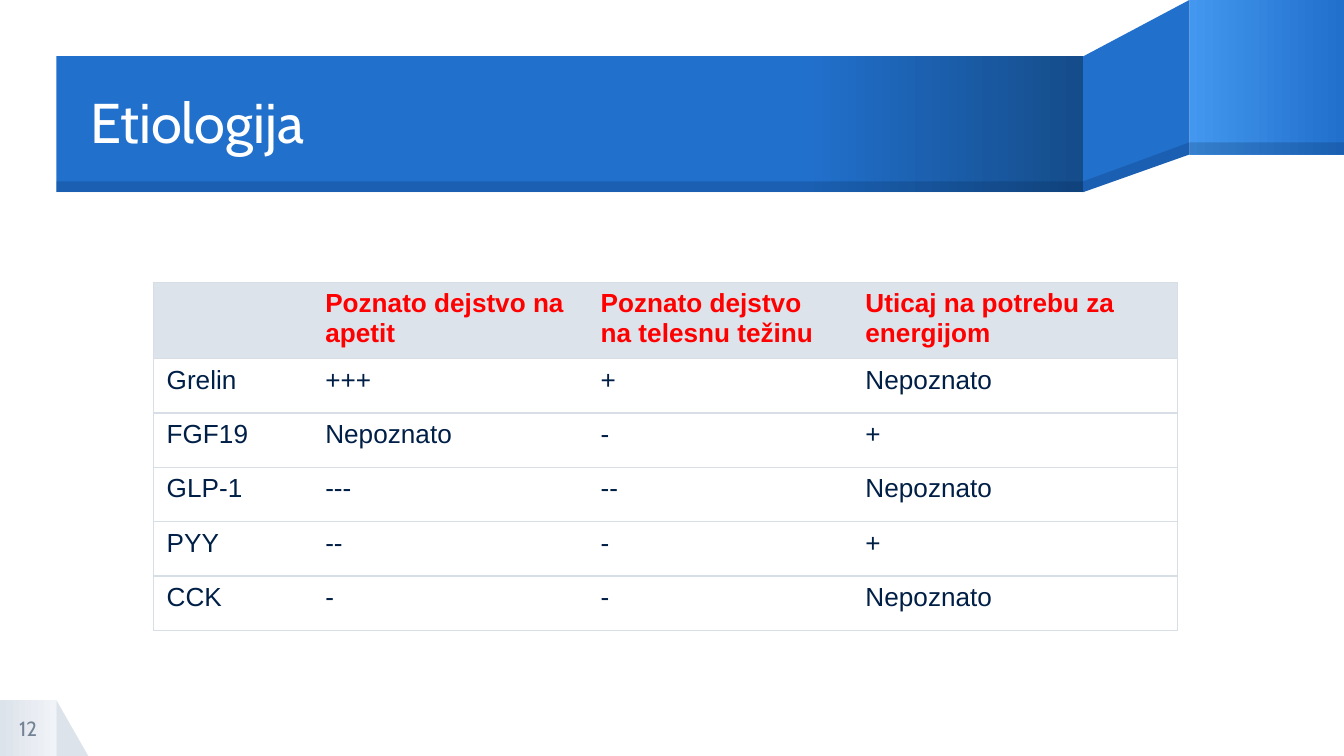
from lxml import etree
from pptx import Presentation
from pptx.dml.color import RGBColor
from pptx.enum.shapes import MSO_SHAPE
from pptx.enum.text import MSO_ANCHOR, PP_ALIGN
from pptx.oxml.ns import qn
from pptx.util import Inches, Pt

RECT = MSO_SHAPE.RECTANGLE
TRIANGLE = MSO_SHAPE.RIGHT_TRIANGLE
MIDDLE = MSO_ANCHOR.MIDDLE
LEFT, CENTER = PP_ALIGN.LEFT, PP_ALIGN.CENTER

WHITE = RGBColor(0xFF, 0xFF, 0xFF)
BLUE = RGBColor(0x21, 0x70, 0xCC)
LIGHT_BLUE = RGBColor(0x43, 0x97, 0xEE)
DARK_BLUE = RGBColor(0x15, 0x4C, 0x8A)
NAVY = RGBColor(0x00, 0x1F, 0x46)
GRAY = RGBColor(0xDD, 0xE3, 0xEB)
PALE_GRAY = RGBColor(0xF0, 0xF3, 0xF7)
NUMBER_GRAY = RGBColor(0x74, 0x83, 0x94)
BORDER = RGBColor(0xD8, 0xDE, 0xE6)
RED = RGBColor(0xFF, 0x00, 0x00)


def paint(sp, color, end=None, start=0, alpha=None):
    sp.shadow.inherit = False
    sp.line.fill.background()
    if end is not None:
        sp.fill.gradient()
        sp.fill.gradient_angle = 0
        first, last = sp.fill.gradient_stops
        first.color.rgb, first.position = color, start
        last.color.rgb, last.position = end, 1
        return
    sp.fill.solid()
    sp.fill.fore_color.rgb = color
    if alpha is not None:
        clr = sp._element.spPr.find(qn("a:solidFill")).find(qn("a:srgbClr"))
        etree.SubElement(clr, qn("a:alpha")).set("val", str(alpha * 1000))


def set_border(cell, side, color):
    ln = etree.SubElement(cell._tc.get_or_add_tcPr(), qn(f"a:ln{side}"), w=str(Pt(0.75)))
    if color is None:
        etree.SubElement(ln, qn("a:noFill"))
    else:
        fill = etree.SubElement(ln, qn("a:solidFill"))
        etree.SubElement(fill, qn("a:srgbClr"), val=str(color))


prs = Presentation()
prs.slide_width, prs.slide_height = Inches(10), Inches(10 * 9 / 16)
s = prs.slides.add_slide(prs.slide_layouts[6])

rects = [
    (TRIANGLE, (0.42, 5.21, 0.24, 0.42), {"color": GRAY}),
    (RECT, (0, 5.21, 0.42, 0.42), {"color": GRAY, "end": PALE_GRAY}),
    (RECT, (8.85, 0, 1.15, 1.15), {"color": LIGHT_BLUE, "end": BLUE}),
    (RECT, (0.42, 0.42, 7.64, 1.01), {"color": BLUE, "end": DARK_BLUE, "start": 0.73}),
    (RECT, (8.85, 1.06, 1.15, 0.09), {"color": NAVY, "alpha": 20}),
    (RECT, (0.42, 1.35, 7.64, 0.08), {"color": NAVY, "alpha": 20}),
]
for kind, box, look in rects:
    sp = s.shapes.add_shape(kind, *[Inches(v) for v in box])
    paint(sp, **look)

folds = [
    ([(8.85, 0), (8.06, 0.42), (8.06, 1.43), (8.85, 1.15)], {"color": BLUE}),
    ([(8.85, 1.06), (8.06, 1.35), (8.06, 1.43), (8.85, 1.15)], {"color": NAVY, "alpha": 20}),
]
for points, look in folds:
    points = [(Inches(x), Inches(y)) for x, y in points]
    builder = s.shapes.build_freeform(*points[0])
    builder.add_line_segments(points[1:], close=True)
    paint(builder.convert_to_shape(), **look)

labels = [
    ("Etiologija", (0.67, 0.43, 7.39, 1.01), 30, WHITE, LEFT, 0.9),
    ("12", (0, 5.21, 0.42, 0.42), 11, NUMBER_GRAY, CENTER, 1.0),
]
for text, box, size, color, align, spacing in labels:
    tf = s.shapes.add_textbox(*[Inches(v) for v in box]).text_frame
    tf.word_wrap = True
    tf.vertical_anchor = MIDDLE
    tf.margin_left = tf.margin_right = tf.margin_top = tf.margin_bottom = 0
    p = tf.paragraphs[0]
    p.text = text
    p.alignment = align
    p.line_spacing = spacing
    r = p.runs[0]
    r.font.name = "Cabin"
    r.font.size = Pt(size)
    r.font.color.rgb = color

rows = [
    ["", "Poznato dejstvo na apetit", "Poznato dejstvo na telesnu težinu", "Uticaj na potrebu za energijom"],
    ["Grelin", "+++", "+", "Nepoznato"],
    ["FGF19", "Nepoznato", "-", "+"],
    ["GLP-1", "---", "--", "Nepoznato"],
    ["PYY", "--", "-", "+"],
    ["CCK", "-", "-", "Nepoznato"],
]
widths = [1.18, 2.05, 1.97, 2.42]
table_height, header_height = 2.59, 0.57
body_height = (table_height - header_height) / (len(rows) - 1)
table = s.shapes.add_table(
    len(rows), len(widths), Inches(1.14), Inches(2.1), Inches(sum(widths)), Inches(table_height)
).table
table.first_row = table.horz_banding = False
for col, width in zip(table.columns, widths):
    col.width = Inches(width)

for i, row in enumerate(rows):
    header = i == 0
    table.rows[i].height = Inches(header_height if header else body_height)
    for j, text in enumerate(row):
        cell = table.cell(i, j)
        set_border(cell, "L", BORDER if j == 0 else None)
        set_border(cell, "R", BORDER if j == len(row) - 1 else None)
        set_border(cell, "T", BORDER)
        set_border(cell, "B", BORDER)
        if header:
            cell.fill.solid()
            cell.fill.fore_color.rgb = GRAY
        else:
            cell.fill.background()
        p = cell.text_frame.paragraphs[0]
        p.text = text
        p.font.size = Pt(14)
        for r in p.runs:
            r.font.name = "Arial"
            r.font.size = Pt(14)
            r.font.bold = header
            r.font.color.rgb = RED if header else NAVY

prs.save("out.pptx")
